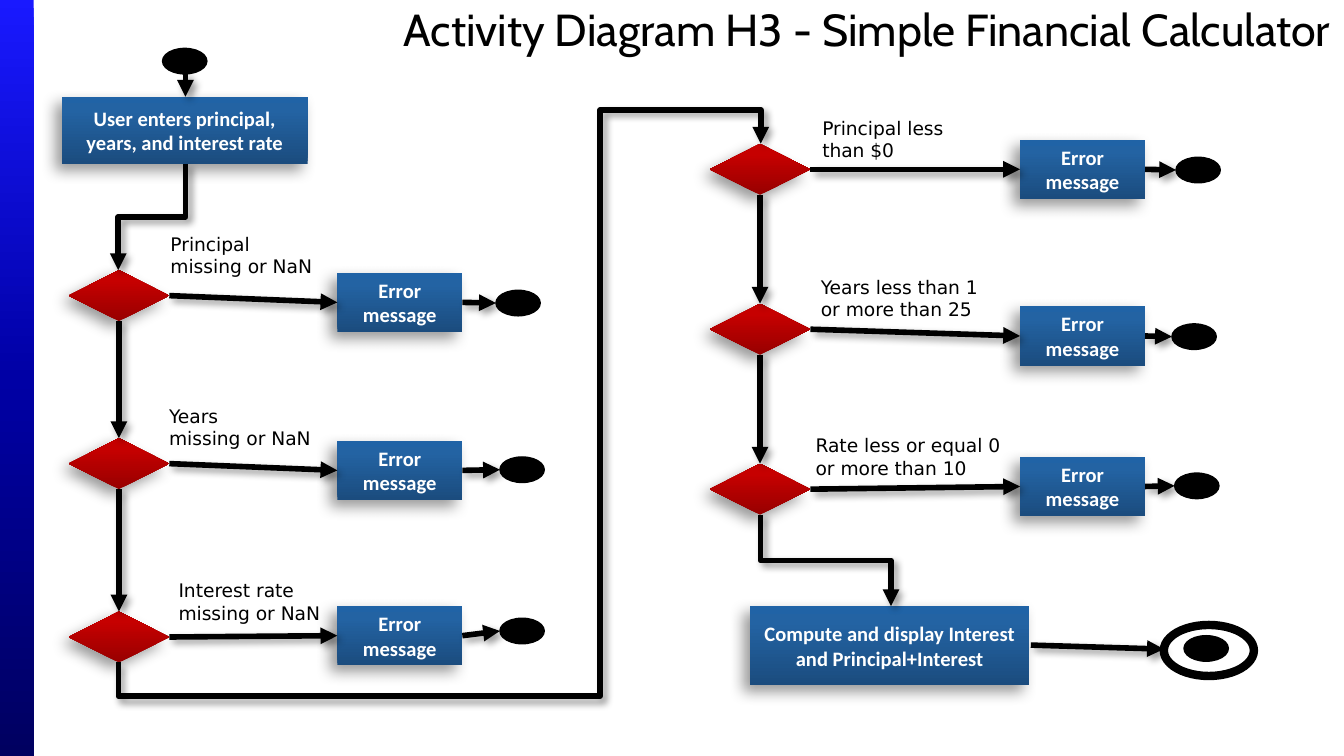
from lxml import etree
from pptx import Presentation
from pptx import util as u
from pptx.dml.color import RGBColor
from pptx.enum import shapes, text
from pptx.oxml import ns, parse_xml

BLACK = RGBColor(0x00, 0x00, 0x00)
WHITE = RGBColor(0xFF, 0xFF, 0xFF)
BLUE_STOPS = [(0, RGBColor(0x1B, 0x4C, 0x7E)), (80, RGBColor(0x23, 0x63, 0xA3)),
              (100, RGBColor(0x20, 0x63, 0xA6))]
RED_STOPS = [(0, RGBColor(0x98, 0x00, 0x00)), (80, RGBColor(0xC6, 0x00, 0x00)),
             (100, RGBColor(0xC7, 0x00, 0x00))]
BAR_STOPS = [(0, RGBColor(0x19, 0x19, 0xFF)), (50, RGBColor(0x00, 0x00, 0xA5)),
             (100, RGBColor(0x00, 0x00, 0x60))]

SLIDE_WIDTH = 10
SLIDE_HEIGHT = SLIDE_WIDTH * 9 / 16
DIAMOND = (0.75, 0.38)
ERROR_BOX = (0.93, 0.44)
NODE = (0.33, 0.19)

# Each column: diamond left, error box left, then its checks:
# diamond top, box top, end node left and top, label, label left, top and width
COLUMNS = [
    (0.51, 2.51, [
        (2.01, 2.03, 3.69, 2.16, "Principal missing or NaN", 1.17, 1.68, 1.32),
        (3.26, 3.28, 3.72, 3.40, "Years\nmissing or NaN", 1.16, 2.96, 1.32),
        (4.55, 4.51, 3.72, 4.60, "Interest rate missing or NaN", 1.23, 4.26, 1.32),
    ]),
    (5.28, 7.59, [
        (1.07, 1.04, 8.75, 1.17, "Principal less than $0", 6.02, 0.82, 1.14),
        (2.26, 2.28, 8.72, 2.41, "Years less than 1 or more than 25", 6.01, 2.00, 1.50),
        (3.45, 3.40, 8.74, 3.52, "Rate less or equal 0\nor more than 10", 5.97, 3.18, 1.68),
    ]),
]


class Diagram:
    """Holds the style and the current slide."""

    label_font, label_size = "DejaVu Sans", 10
    box_font, box_size = "Calibri", 11
    title_font, title_size = "Cabin", 24
    arrow_width = 3

    def __init__(self, slide):
        self.slide = slide

    def _write(self, frame, content, font, size, color, align, bold=False):
        frame.word_wrap = True
        paragraph = frame.paragraphs[0]
        paragraph.alignment = align
        for number, line in enumerate(content.split("\n")):
            if number:
                paragraph.add_line_break()
            run = paragraph.add_run()
            run.text = line
            run.font.name, run.font.size, run.font.bold = font, u.Pt(size), bold
            run.font.color.rgb = color

    def _shape(self, kind, left, top, width, height):
        shape = self.slide.shapes.add_shape(
            kind, u.Inches(left), u.Inches(top), u.Inches(width), u.Inches(height))
        shape.shadow.inherit = False
        shape.line.fill.background()
        return shape

    def _gradient(self, shape, stops, angle):
        shape.fill.gradient()
        shape.fill.gradient_angle = 360 - angle
        stop_list = shape._element.spPr.find(".//" + ns.qn("a:gsLst"))
        for stop in list(stop_list):
            stop_list.remove(stop)
        for position, color in stops:
            stop = etree.SubElement(stop_list, ns.qn("a:gs"), pos=str(position * 1000))
            etree.SubElement(stop, ns.qn("a:srgbClr"), val=str(color))

    def _shadow(self, shape, blur, distance, angle):
        properties = shape._element.spPr
        for effects in properties.findall(ns.qn("a:effectLst")):
            properties.remove(effects)
        properties.append(parse_xml(
            f'<a:effectLst {ns.nsdecls("a")}><a:outerShdw blurRad="{u.Pt(blur)}" '
            f'dist="{u.Pt(distance)}" dir="{angle * 60000}" algn="bl" rotWithShape="0">'
            '<a:srgbClr val="000000"><a:alpha val="40000"/></a:srgbClr>'
            '</a:outerShdw></a:effectLst>'))

    def title(self, content, left, top, width, height):
        shape = self.slide.shapes.title
        shape.left, shape.top = u.Inches(left), u.Inches(top)
        shape.width, shape.height = u.Inches(width), u.Inches(height)
        frame = shape.text_frame
        frame.auto_size = text.MSO_AUTO_SIZE.NONE
        frame.vertical_anchor = text.MSO_ANCHOR.MIDDLE
        frame.margin_bottom = u.Inches(0.46)  # lifts the line to the slide's top
        self._write(frame, content, self.title_font, self.title_size, BLACK,
                    text.PP_ALIGN.RIGHT)

    def side_bar(self, width):
        bar = self._shape(shapes.MSO_SHAPE.RECTANGLE, 0, 0, width, SLIDE_HEIGHT)
        self._gradient(bar, BAR_STOPS, 90)

    def box(self, content, left, top, width, height):
        shape = self._shape(shapes.MSO_SHAPE.FLOWCHART_PROCESS, left, top, width, height)
        self._gradient(shape, BLUE_STOPS, 270)
        self._shadow(shape, 8, 5, 135)
        frame = shape.text_frame
        frame.margin_left = frame.margin_right = u.Inches(0.1)
        frame.margin_top = frame.margin_bottom = u.Inches(0.1)
        frame.vertical_anchor = text.MSO_ANCHOR.MIDDLE
        self._write(frame, content, self.box_font, self.box_size, WHITE,
                    text.PP_ALIGN.CENTER, bold=True)

    def decision(self, left, top):
        shape = self._shape(shapes.MSO_SHAPE.FLOWCHART_DECISION, left, top, *DIAMOND)
        self._gradient(shape, RED_STOPS, 270)
        self._shadow(shape, 8, 5, 135)

    def node(self, left, top, size=NODE, fill=BLACK, line_width=0.75):
        shape = self._shape(shapes.MSO_SHAPE.OVAL, left, top, *size)
        shape.fill.solid()
        shape.fill.fore_color.rgb = fill
        shape.line.color.rgb = BLACK
        shape.line.width = u.Pt(line_width)

    def label(self, content, left, top, width):
        shape = self.slide.shapes.add_textbox(
            u.Inches(left), u.Inches(top), u.Inches(width), u.Inches(0.44))
        self._write(shape.text_frame, content, self.label_font, self.label_size, BLACK,
                    text.PP_ALIGN.LEFT)

    def arrow(self, x1, y1, x2, y2, kind=shapes.MSO_CONNECTOR.STRAIGHT):
        connector = self.slide.shapes.add_connector(
            kind, u.Inches(x1), u.Inches(y1), u.Inches(x2), u.Inches(y2))
        connector.line.color.rgb = BLACK
        connector.line.width = u.Pt(self.arrow_width)
        etree.SubElement(connector.line._get_or_add_ln(), ns.qn("a:tailEnd"),
                         type="triangle")
        self._shadow(connector, 4, 3, 45)
        return connector

    def bent_arrow(self, x1, y1, x2, y2, bends=(0.5,)):
        """Leaves and arrives vertically: an elbow turned by 90 degrees."""
        middle_x, middle_y = (x1 + x2) / 2, (y1 + y2) / 2
        half_x, half_y = (x2 - x1) / 2, (y2 - y1) / 2
        connector = self.arrow(middle_x - half_y, middle_y + half_x,
                               middle_x + half_y, middle_y - half_x,
                               shapes.MSO_CONNECTOR.ELBOW)
        properties = connector._element.spPr
        properties.find(ns.qn("a:xfrm")).set("rot", str(90 * 60000))
        geometry = properties.find(ns.qn("a:prstGeom"))
        geometry.set("prst", f"bentConnector{len(bends) + 2}")
        guides = geometry.find(ns.qn("a:avLst"))
        for number, bend in enumerate(bends, 1):
            etree.SubElement(guides, ns.qn("a:gd"), name=f"adj{number}",
                             fmla=f"val {round(bend * 100000)}")

    def check(self, diamond_left, box_left, row):
        top, box_top, node_left, node_top, content, label_left, label_top, width = row
        box_middle = box_top + ERROR_BOX[1] / 2
        self.decision(diamond_left, top)
        self.box("Error message", box_left, box_top, *ERROR_BOX)
        self.node(node_left, node_top)
        self.arrow(diamond_left + DIAMOND[0], top + DIAMOND[1] / 2, box_left, box_middle)
        self.arrow(box_left + ERROR_BOX[0], box_middle, node_left, node_top + NODE[1] / 2)
        self.label(content, label_left, label_top, width)


def main():
    presentation = Presentation()
    presentation.slide_width = u.Inches(SLIDE_WIDTH)
    presentation.slide_height = u.Inches(SLIDE_HEIGHT)
    diagram = Diagram(presentation.slides.add_slide(presentation.slide_layouts[5]))

    # Side bar and title
    diagram.side_bar(0.25)
    diagram.title("Activity Diagram H3 - Simple Financial Calculator", 0.42, 0.15, 9.58, 0.53)

    # Start and user input
    diagram.node(1.21, 0.36)
    diagram.box("User enters principal, years, and interest rate", 0.46, 0.72, 1.83, 0.5)
    diagram.arrow(1.38, 0.54, 1.38, 0.72)

    # Checks, joined from top to bottom in each column
    for diamond_left, box_left, rows in COLUMNS:
        middle = diamond_left + DIAMOND[0] / 2
        for row in rows:
            diagram.check(diamond_left, box_left, row)
        for upper, lower in zip(rows, rows[1:]):
            diagram.arrow(middle, upper[0] + DIAMOND[1], middle, lower[0])

    # Result and final node
    diagram.box("Compute and display Interest and Principal+Interest", 5.58, 4.51, 2.08, 0.59)
    diagram.node(8.66, 4.65, (0.67, 0.38), WHITE, 4.5)
    diagram.node(8.81, 4.73)
    diagram.arrow(7.67, 4.8, 8.66, 4.83)

    # Bent arrows: into, between and out of the columns
    overshoot = 0.25 / (4.93 - 1.07)
    diagram.bent_arrow(1.38, 1.22, 0.88, 2.01)
    diagram.bent_arrow(0.88, 4.93, 5.66, 1.07, (-overshoot, 0.75, 1 + overshoot))
    diagram.bent_arrow(5.66, 3.83, 6.63, 4.51)

    presentation.save("out.pptx")


if __name__ == "__main__":
    main()
